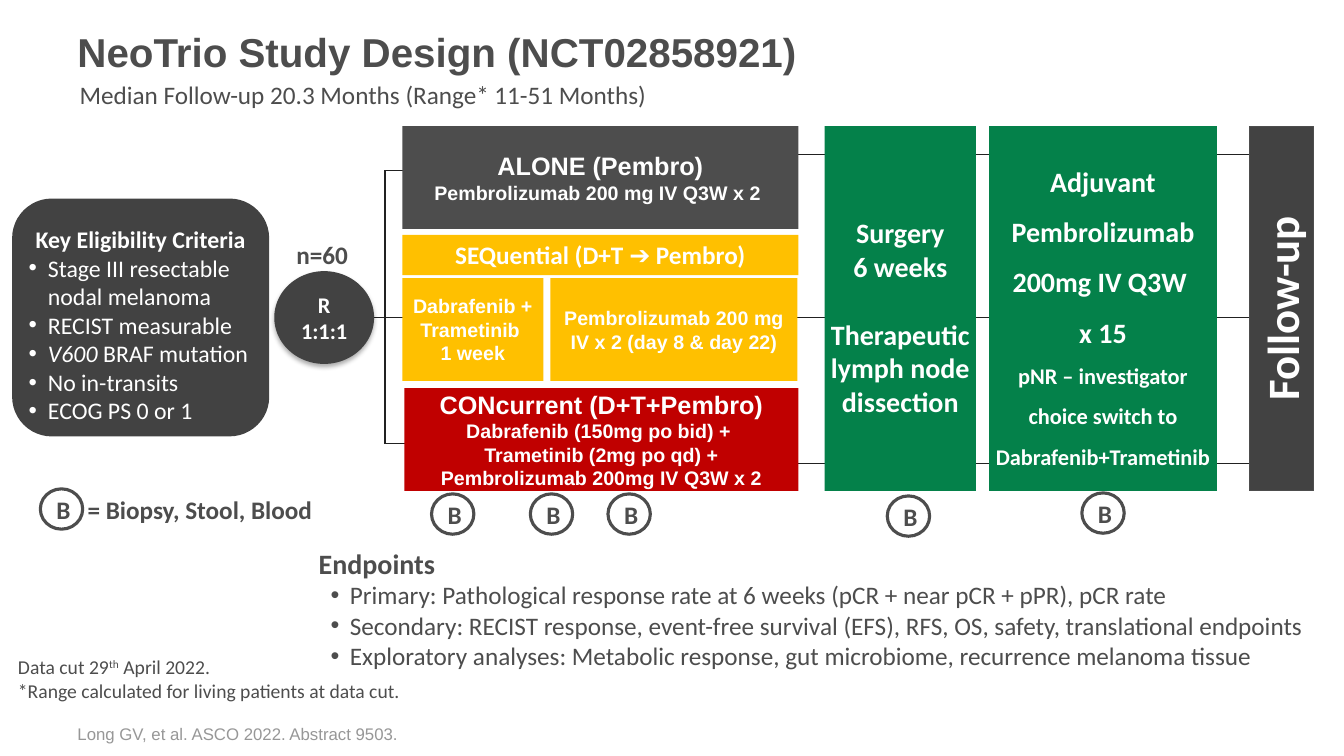
from dataclasses import dataclass
from typing import NamedTuple

from lxml.etree import SubElement as Sub
from pptx import Presentation
from pptx.dml.color import RGBColor as Rgb
from pptx.enum.shapes import MSO_CONNECTOR as Link, MSO_SHAPE as Kind
from pptx.enum.text import MSO_ANCHOR as Anchor, PP_ALIGN as Align
from pptx.oxml.ns import qn
from pptx.util import Inches, Pt


@dataclass(frozen=True)
class Theme:
    ink: str = "4D4D4D"
    dark: str = "424242"
    wire: str = "212121"
    pale: str = "979797"
    white: str = "FFFFFF"
    gold: str = "FFC000"
    red: str = "C00000"
    green: str = "04814A"
    sans: str = "Arial"
    body: str = "Calibri"
    title: float = 28.8
    huge: float = 32
    large: float = 20
    main: float = 18
    list: float = 17
    mid: float = 16
    small: float = 14
    tiny: float = 12


LOOK = Theme()


class Span(NamedTuple):
    text: str
    slant: bool = False
    lift: int = 0


class Para(NamedTuple):
    spans: str | tuple[Span, ...]
    size: float = LOOK.main
    bold: bool = True
    dent: float = 0
    space: float | None = None
    gap: float = 0


class Box(NamedTuple):
    left: float
    top: float
    width: float
    height: float
    paras: tuple[Para, ...]
    fill: str | None = None
    color: str = LOOK.white
    font: str = LOOK.body
    kind: Kind = Kind.RECTANGLE
    align: Align = Align.CENTER
    anchor: Anchor = Anchor.MIDDLE
    side: float = 0.1
    line: float = 0
    turn: float = 0


class Wire(NamedTuple):
    x1: float
    y1: float
    x2: float
    y2: float


def write(frame, paras: tuple[Para, ...], *, font: str, color: str,
          align: Align, anchor: Anchor, side: float = 0.1) -> None:
    frame.word_wrap = True
    frame.vertical_anchor = anchor
    frame.margin_left = frame.margin_right = Inches(side)
    frame.margin_top = frame.margin_bottom = Inches(0.05)
    for i, item in enumerate(paras):
        para = frame.add_paragraph() if i else frame.paragraphs[0]
        para.alignment = align
        if item.space:
            para.line_spacing = item.space
        if item.gap:
            para.space_before = Pt(item.gap)
        if item.dent:
            para.alignment = Align.LEFT
            mark(para, item.dent, color)
        spans = (Span(item.spans),) if isinstance(item.spans, str) else item.spans
        for span in spans:
            run = para.add_run()
            run.text = span.text
            run.font.name = font
            run.font.size = Pt(item.size)
            run.font.bold = item.bold
            run.font.italic = span.slant
            run.font.color.rgb = Rgb.from_string(color)
            if span.lift:
                run._r.get_or_add_rPr().set("baseline", str(span.lift * 1000))


def mark(para, dent: float, color: str) -> None:
    props = para._p.get_or_add_pPr()
    props.set("marL", str(Inches(dent)))
    props.set("indent", str(-Inches(0.19)))
    Sub(Sub(props, qn("a:buClr")), qn("a:srgbClr"), val=color)
    Sub(props, qn("a:buFont"), typeface=LOOK.sans)
    Sub(props, qn("a:buChar"), char="•")


def draw(slide, box: Box):
    shape = slide.shapes.add_shape(box.kind, *map(Inches, box[:4]))
    shape.shadow.inherit = False
    shape.rotation = box.turn
    if box.fill:
        shape.fill.solid()
        shape.fill.fore_color.rgb = Rgb.from_string(box.fill)
    else:
        shape.fill.background()
    if box.line:
        shape.line.color.rgb = Rgb.from_string(LOOK.ink)
        shape.line.width = Pt(box.line)
    else:
        shape.line.fill.background()
    write(shape.text_frame, box.paras, font=box.font, color=box.color,
          align=box.align, anchor=box.anchor, side=box.side)
    return shape


def label(slide, box: Box) -> None:
    text = slide.shapes.add_textbox(*map(Inches, box[:4]))
    write(text.text_frame, box.paras, font=box.font, color=box.color,
          align=Align.LEFT, anchor=box.anchor)


def join(slide, wire: Wire) -> None:
    line = slide.shapes.add_connector(Link.STRAIGHT, *map(Inches, wire))
    line.line.color.rgb = Rgb.from_string(LOOK.wire)
    line.line.width = Pt(1)
    Sub(line._element.spPr, qn("a:effectLst"))


def shade(shape) -> None:
    glow = Sub(shape._element.spPr.find(qn("a:effectLst")), qn("a:outerShdw"),
               blurRad=str(Pt(3.5)), dist=str(Pt(2.2)), dir="5400000", rotWithShape="0")
    tint = Sub(glow, qn("a:srgbClr"), val="000000")
    Sub(tint, qn("a:alpha"), val="32000")


WIRES = (
    Wire(7.79, 3.15, 12.62, 3.15), Wire(7.91, 1.53, 12.58, 1.53),
    Wire(7.79, 4.6, 12.62, 4.6), Wire(3.3, 3.15, 4.31, 3.15),
    Wire(3.82, 1.69, 3.82, 4.4), Wire(3.81, 1.69, 4.31, 1.69),
    Wire(3.81, 4.4, 4.31, 4.4),
)

SPLIT = Box(2.72, 2.69, 0.99, 0.92, (Para("R 1:1:1", LOOK.mid),),
            LOOK.dark, kind=Kind.OVAL)

GOALS = (
    "Primary: Pathological response rate at 6 weeks (pCR + near pCR + pPR), pCR rate",
    "Secondary: RECIST response, event-free survival (EFS), RFS, OS, safety, translational endpoints",
    "Exploratory analyses: Metabolic response, gut microbiome, recurrence melanoma tissue",
)

RULES = (
    "Stage III resectable nodal melanoma",
    "RECIST measurable",
    (Span("V600 ", slant=True), Span("BRAF mutation")),
    "No in-transits",
    "ECOG PS 0 or 1",
)

BOXES = (
    Box(2.98, 5.19, 10.71, 1.69,
        (Para("Endpoints", LOOK.large),
         *(Para(goal, bold=False, dent=0.31) for goal in GOALS)),
        color=LOOK.ink, kind=Kind.ROUNDED_RECTANGLE, align=Align.LEFT),
    Box(3.99, 1.25, 3.93, 1.02,
        (Para("ALONE (Pembro)"), Para("Pembrolizumab 200 mg IV Q3W x 2 ", LOOK.small)),
        LOOK.ink, font=LOOK.sans),
    Box(4.01, 3.85, 3.91, 1.02,
        (Para("CONcurrent (D+T+Pembro)"),
         Para("Dabrafenib (150mg po bid) + ", LOOK.small),
         Para("Trametinib (2mg po qd) + Pembrolizumab 200mg IV Q3W x 2", LOOK.small)),
        LOOK.red, font=LOOK.sans),
    Box(0.12, 1.97, 2.55, 2.36,
        (Para("Key Eligibility Criteria", LOOK.list, space=1.5),
         *(Para(rule, LOOK.list, False, 0.19) for rule in RULES)),
        LOOK.dark, kind=Kind.ROUNDED_RECTANGLE, side=0.05),
    Box(8.18, 1.25, 1.5, 3.62,
        (Para("Surgery", LOOK.large, space=1.5), Para("6 weeks", LOOK.large),
         Para("Therapeutic lymph node dissection", LOOK.large, gap=24.4)),
        LOOK.green, side=0.05),
    Box(9.81, 1.25, 2.26, 3.62,
        (*(Para(text, LOOK.large, space=1.5)
           for text in ("Adjuvant", "Pembrolizumab", "200mg IV Q3W ", "x 15")),
         Para("pNR – investigator choice switch to Dabrafenib+Trametinib", LOOK.mid, space=1.5)),
        LOOK.green, side=0.05),
    Box(10.9, 2.74, 3.62, 0.64, (Para("Follow-up", LOOK.huge),), LOOK.dark,
        anchor=Anchor.TOP, line=0.75, turn=270),
    Box(3.99, 2.76, 1.4, 1.02,
        (Para("Dabrafenib + Trametinib ", LOOK.small), Para("1 week", LOOK.small)),
        LOOK.gold, font=LOOK.sans),
    Box(5.46, 2.76, 2.45, 1.02,
        (Para("Pembrolizumab 200 mg IV x 2 (day 8 & day 22)", LOOK.small),),
        LOOK.gold, font=LOOK.sans),
    Box(3.99, 2.33, 3.93, 0.4, (Para("SEQuential (D+T ➔ Pembro)"),),
        LOOK.gold, anchor=Anchor.TOP),
    *(Box(left, top, 0.42, 0.4, (Para("B"),), color=LOOK.ink, kind=Kind.OVAL, line=2.25)
      for left, top in ((4.28, 4.9), (5.26, 4.9), (6.03, 4.9),
                        (8.8, 4.92), (10.73, 4.89), (0.4, 4.85))),
)

LABELS = (
    Box(0.67, 0.22, 11.75, 0.57, (Para("NeoTrio Study Design (NCT02858921)", LOOK.title),),
        color=LOOK.ink, font=LOOK.sans),
    Box(0.69, 0.74, 5.88, 0.4,
        (Para("Median Follow-up 20.3 Months (Range* 11-51 Months)", bold=False),),
        color=LOOK.ink, anchor=Anchor.TOP),
    Box(0.08, 6.45, 6, 0.57,
        (Para((Span("Data cut 29"), Span("th", lift=30), Span(" April 2022.")), LOOK.small, False),
         Para("*Range calculated for living patients at data cut.", LOOK.small, False)),
        color=LOOK.ink, anchor=Anchor.TOP),
    Box(0.77, 4.86, 2.45, 0.4, (Para("= Biopsy, Stool, Blood"),),
        color=LOOK.ink, anchor=Anchor.TOP),
    Box(2.84, 2.33, 0.72, 0.4, (Para("n=60"),), color=LOOK.ink, anchor=Anchor.TOP),
    Box(0.67, 6.95, 11.75, 0.48,
        (Para("Long GV, et al. ASCO 2022. Abstract 9503.", LOOK.tiny, False),),
        color=LOOK.pale, font=LOOK.sans, anchor=Anchor.BOTTOM),
)


def main() -> None:
    deck = Presentation()
    deck.slide_width, deck.slide_height = Inches(13.33), Inches(7.5)
    slide = deck.slides.add_slide(deck.slide_layouts[6])
    for wire in WIRES:
        join(slide, wire)
    shade(draw(slide, SPLIT))
    for box in BOXES:
        draw(slide, box)
    for box in LABELS:
        label(slide, box)
    deck.save("out.pptx")


if __name__ == "__main__":
    main()
